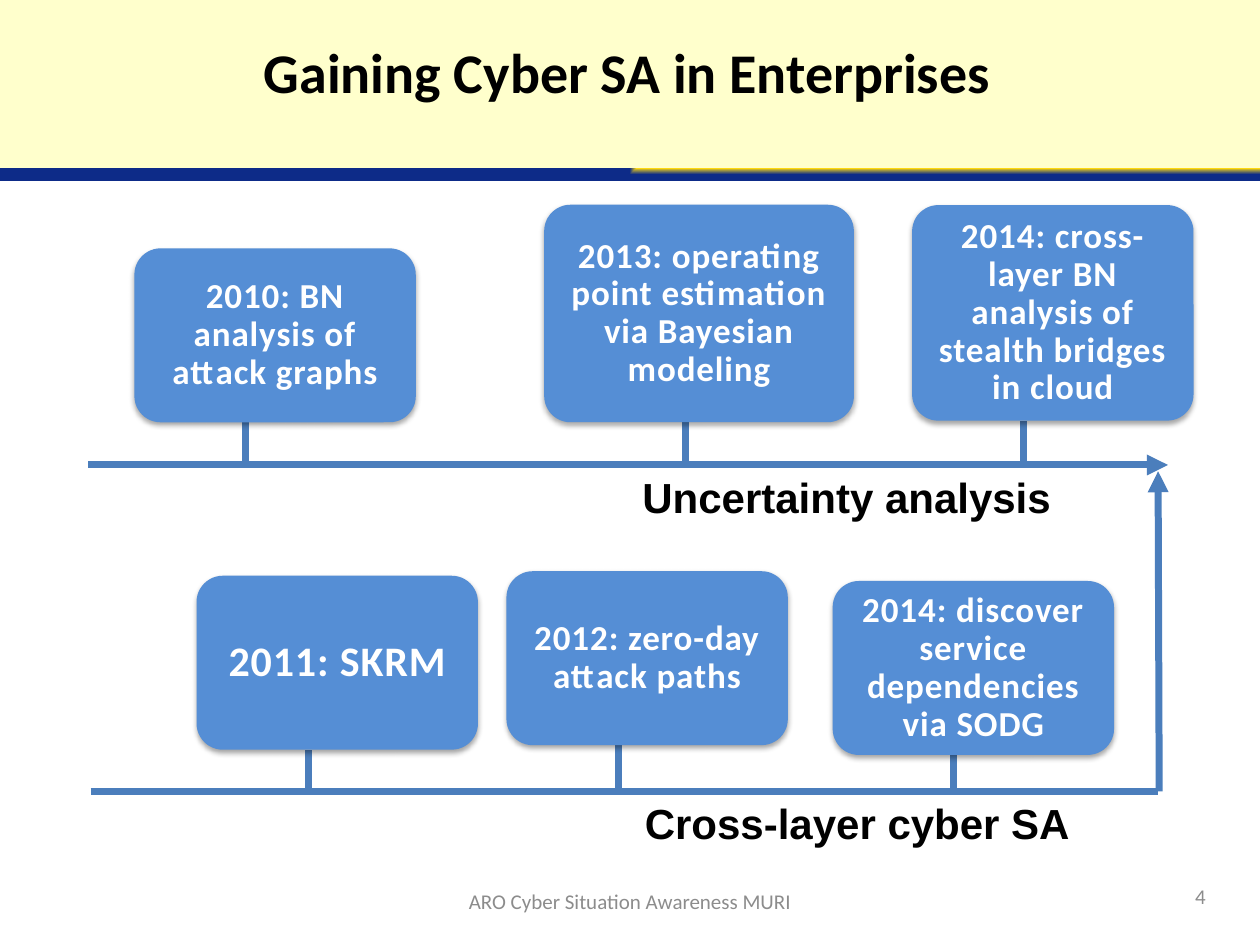
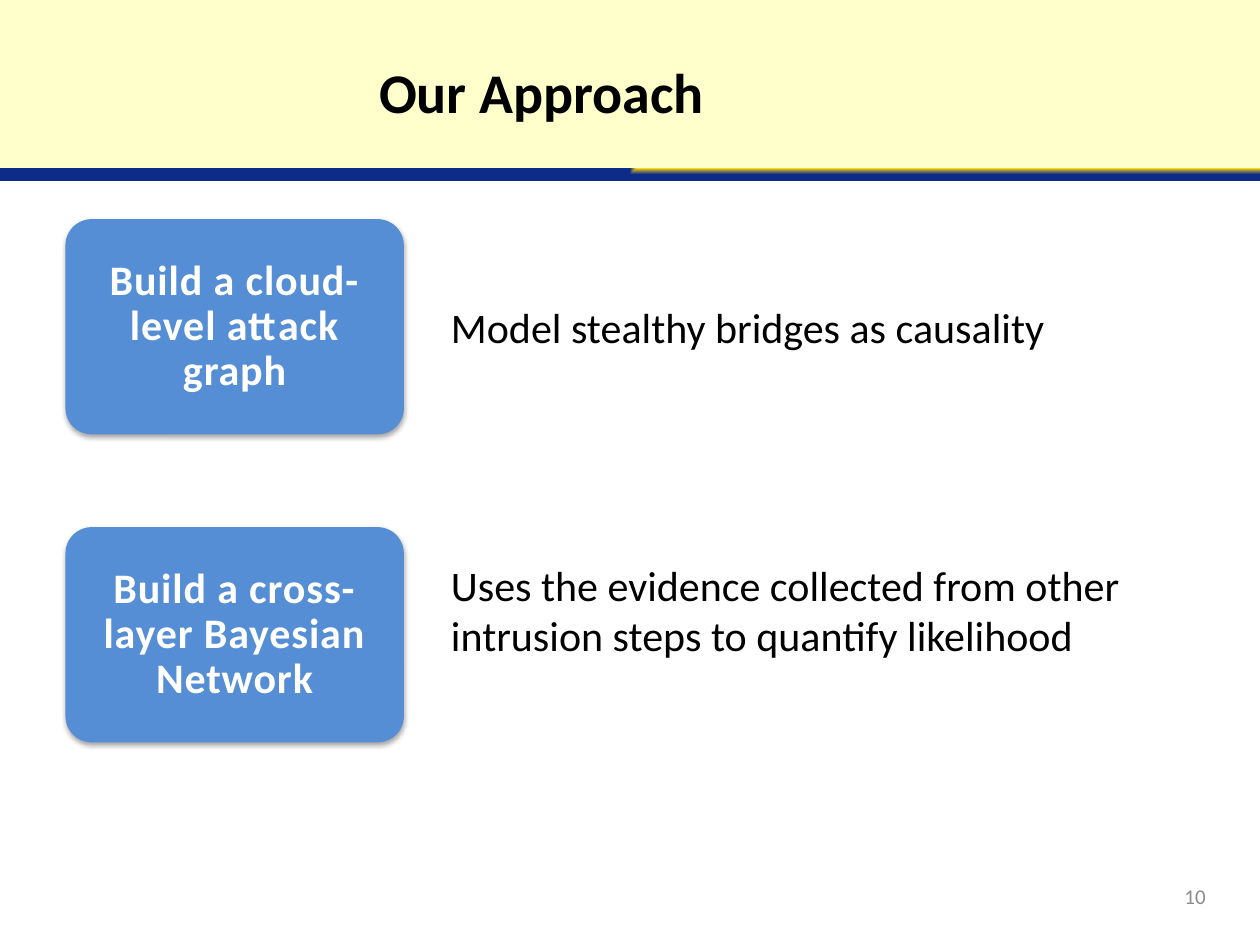
from dataclasses import dataclass
from typing import NamedTuple

from lxml.etree import SubElement
from pptx import Presentation
from pptx.dml.color import RGBColor
from pptx.enum.shapes import MSO_CONNECTOR, MSO_SHAPE
from pptx.enum.text import MSO_ANCHOR, PP_ALIGN
from pptx.oxml import parse_xml
from pptx.oxml.ns import nsdecls, qn
from pptx.util import Pt


@dataclass(frozen=True)
class Theme:
    """Colours, fonts and sizes shared by the slides."""
    header: str = "FFFFCC"
    gold: str = "FED910"
    navy: str = "0D2B88"
    card: str = "558ED5"
    axis: str = "4B7EBC"
    ink: str = "000000"
    light: str = "FFFFFF"
    muted: str = "8C8C8C"
    body_font: str = "Calibri"
    label_font: str = "Arial"
    title_size: float = 32
    large_size: float = 24
    card_size: float = 20
    footer_size: float = 12
    axis_width: float = 4
    corner: float = 15
    card_inset: float = 8.6


class Box(NamedTuple):
    """A rectangle in points."""
    left: float
    top: float
    width: float
    height: float

    def lengths(self):
        """Return the four lengths for a python-pptx call."""
        return tuple(Pt(value) for value in self)


class Milestone(NamedTuple):
    """A card on a timeline, placed from the start of its axis."""
    offset: float
    width: float
    height: float
    lift: float
    stem: float
    text: str
    size: float


THEME = Theme()
PAGE_WIDTH, PAGE_HEIGHT = 720, 540


def format_text(frame, size, color, font=THEME.body_font, bold=False, align=PP_ALIGN.LEFT):
    """Apply one style to every run in a text frame."""
    frame.word_wrap = True
    for paragraph in frame.paragraphs:
        paragraph.alignment = align
        for run in paragraph.runs:
            run.font.size = Pt(size)
            run.font.name = font
            run.font.bold = bold
            run.font.color.rgb = RGBColor.from_string(color)


def add_text(slide, box, text, size, color, anchor=MSO_ANCHOR.TOP, **style):
    """Add a styled text box."""
    frame = slide.shapes.add_textbox(*box.lengths()).text_frame
    frame.text = text
    frame.vertical_anchor = anchor
    format_text(frame, size, color, **style)


def soft_shadow():
    """Return the shadow used by cards and their text."""
    return parse_xml(
        f'<a:effectLst {nsdecls("a")}><a:outerShdw blurRad="39370" dist="22860" '
        'dir="5400000" rotWithShape="0"><a:srgbClr val="000000"><a:alpha val="35000"/>'
        '</a:srgbClr></a:outerShdw></a:effectLst>')


def add_plain_shape(slide, kind, box):
    """Add a shape without outline or shadow."""
    shape = slide.shapes.add_shape(kind, *box.lengths())
    shape.shadow.inherit = False
    shape.line.fill.background()
    return shape


def add_card(slide, box, text, size):
    """Add a rounded blue card with centred text."""
    card = add_plain_shape(slide, MSO_SHAPE.ROUNDED_RECTANGLE, box)
    card.adjustments[0] = THEME.corner / min(box.width, box.height)
    card.fill.solid()
    card.fill.fore_color.rgb = RGBColor.from_string(THEME.card)
    properties = card._element.spPr
    properties.replace(properties.find(qn("a:effectLst")), soft_shadow())
    frame = card.text_frame
    frame.text = text
    frame.vertical_anchor = MSO_ANCHOR.MIDDLE
    frame.margin_left = frame.margin_right = Pt(THEME.card_inset)
    frame.margin_top = frame.margin_bottom = Pt(THEME.card_inset)
    format_text(frame, size, THEME.light, bold=True, align=PP_ALIGN.CENTER)
    frame.paragraphs[0].line_spacing = 0.9
    for run in frame.paragraphs[0].runs:
        run_properties = run._r.get_or_add_rPr()
        run_properties.set("spc", "50")
        run_properties.find(qn("a:solidFill")).addnext(soft_shadow())


def add_axis_line(slide, start, end, arrow=False):
    """Add a timeline line, with an arrowhead at its end if asked."""
    line = slide.shapes.add_connector(
        MSO_CONNECTOR.STRAIGHT, *(Pt(value) for value in (*start, *end)))
    line.line.width = Pt(THEME.axis_width)
    line.line.color.rgb = RGBColor.from_string(THEME.axis)
    properties = line._element.spPr
    if arrow:
        SubElement(properties.find(qn("a:ln")), qn("a:tailEnd"), type="triangle")
    SubElement(properties, qn("a:effectLst"))


def add_header(slide, box):
    """Add the pale header and the gradient rule along its lower edge."""
    header = add_plain_shape(slide, MSO_SHAPE.RECTANGLE, box)
    header.fill.solid()
    header.fill.fore_color.rgb = RGBColor.from_string(THEME.header)
    rule_box = Box(box.left, box.top + box.height - 1.2, box.width, 7.4)
    rule = add_plain_shape(slide, MSO_SHAPE.RECTANGLE, rule_box)
    rule._element.spPr.find(qn("a:prstGeom")).addnext(parse_xml(
        f'<a:gradFill {nsdecls("a")} rotWithShape="0"><a:gsLst>'
        f'<a:gs pos="0"><a:srgbClr val="{THEME.gold}"/></a:gs>'
        f'<a:gs pos="100000"><a:srgbClr val="{THEME.navy}"/></a:gs></a:gsLst>'
        '<a:path path="rect"><a:fillToRect l="100000" b="100000"/></a:path></a:gradFill>'))


def add_page(deck, title, title_box, number, title_align):
    """Add a blank slide with its header, title and page number."""
    slide = deck.slides.add_slide(deck.slide_layouts[6])
    add_header(slide, Box(0, 0, PAGE_WIDTH, 97.2))
    add_text(slide, title_box, title, THEME.title_size, THEME.ink, bold=True, align=title_align)
    add_text(slide, Box(528, 497.5, 168, 28.8), number, THEME.footer_size, THEME.muted,
             anchor=MSO_ANCHOR.MIDDLE, align=PP_ALIGN.RIGHT)
    return slide


def add_timeline(slide, box, label, label_offset, milestones, arrow=False):
    """Add an axis along the foot of the box, its cards above and its label below."""
    axis = box.top + box.height
    add_axis_line(slide, (box.left, axis), (box.left + box.width, axis), arrow)
    add_text(slide, Box(box.left + label_offset, axis, 340, 36), label,
             THEME.large_size, THEME.ink, font=THEME.label_font, bold=True)
    for milestone in milestones:
        left = box.left + milestone.offset
        foot = axis - milestone.lift
        add_axis_line(slide, (left + milestone.stem, axis), (left + milestone.stem, foot))
        add_card(slide, Box(left, foot - milestone.height, milestone.width, milestone.height),
                 milestone.text, milestone.size)


def add_enterprise_slide(deck):
    """Build the slide with the two linked timelines."""
    slide = add_page(deck, "Gaining Cyber SA in Enterprises", Box(34.5, 18, 648, 56),
                     "4", PP_ALIGN.CENTER)
    add_text(slide, Box(246, 500.4, 228, 28.8), "ARO Cyber Situation Awareness MURI",
             THEME.footer_size, THEME.muted, anchor=MSO_ANCHOR.MIDDLE, align=PP_ALIGN.CENTER)
    uncertainty = Box(50.4, 117.2, 617, 148.5)
    cross_layer = Box(51.8, 326.4, 610, 125.8)
    small = THEME.card_size
    add_timeline(slide, uncertainty, "Uncertainty analysis", 309.6, [
        Milestone(26.4, 160.8, 99.4, 24.4, 63.6, "2010: BN analysis of attack graphs", small),
        Milestone(260.6, 177, 124.3, 24.4, 80.6,
                  "2013: operating point estimation via Bayesian modeling", small),
        Milestone(470.8, 160.8, 123.2, 25.3, 63.6,
                  "2014: cross-layer BN analysis of stealth bridges in cloud", small),
    ], arrow=True)
    add_timeline(slide, cross_layer, "Cross-layer cyber SA", 309.6, [
        Milestone(60.5, 160.8, 99.4, 23.8, 64, "2011: SKRM", THEME.large_size),
        Milestone(237.6, 160.8, 99.4, 26.4, 64, "2012: zero-day attack paths", small),
        Milestone(424, 160.8, 99.4, 20.8, 69, "2014: discover service dependencies via SODG",
                  small),
    ])
    riser = cross_layer.left + cross_layer.width
    add_axis_line(slide, (riser + 0.6, cross_layer.top + cross_layer.height),
                  (riser, uncertainty.top + uncertainty.height + 3.6), arrow=True)


def add_step(slide, box, step, explanation, explanation_top):
    """Add a step card at the left of the box and its explanation at the right."""
    add_card(slide, Box(box.left, box.top, 193.4, box.height), step, THEME.large_size)
    add_text(slide, Box(box.left + 213.2, box.top + explanation_top, box.width - 213.2, 36),
             explanation, THEME.large_size, THEME.ink)


def add_approach_slide(deck):
    """Build the slide with the steps of the approach."""
    slide = add_page(deck, "Our Approach", Box(209.5, 29.5, 281.5, 60.5), "10", PP_ALIGN.LEFT)
    steps = [
        ("Build a cloud-level attack graph", "Model stealthy bridges as causality", 43.4),
        ("Build a cross-layer Bayesian Network",
         "Uses the evidence collected from other\nintrusion steps to quantify likelihood", 15),
    ]
    for row, (step, explanation, explanation_top) in enumerate(steps):
        add_step(slide, Box(37.4, 125.2 + row * 176, 640, 123),
                 step, explanation, explanation_top)


def main():
    """Build and save the deck."""
    deck = Presentation()
    deck.slide_width, deck.slide_height = Pt(PAGE_WIDTH), Pt(PAGE_HEIGHT)
    add_enterprise_slide(deck)
    add_approach_slide(deck)
    deck.save("out.pptx")


if __name__ == "__main__":
    main()
